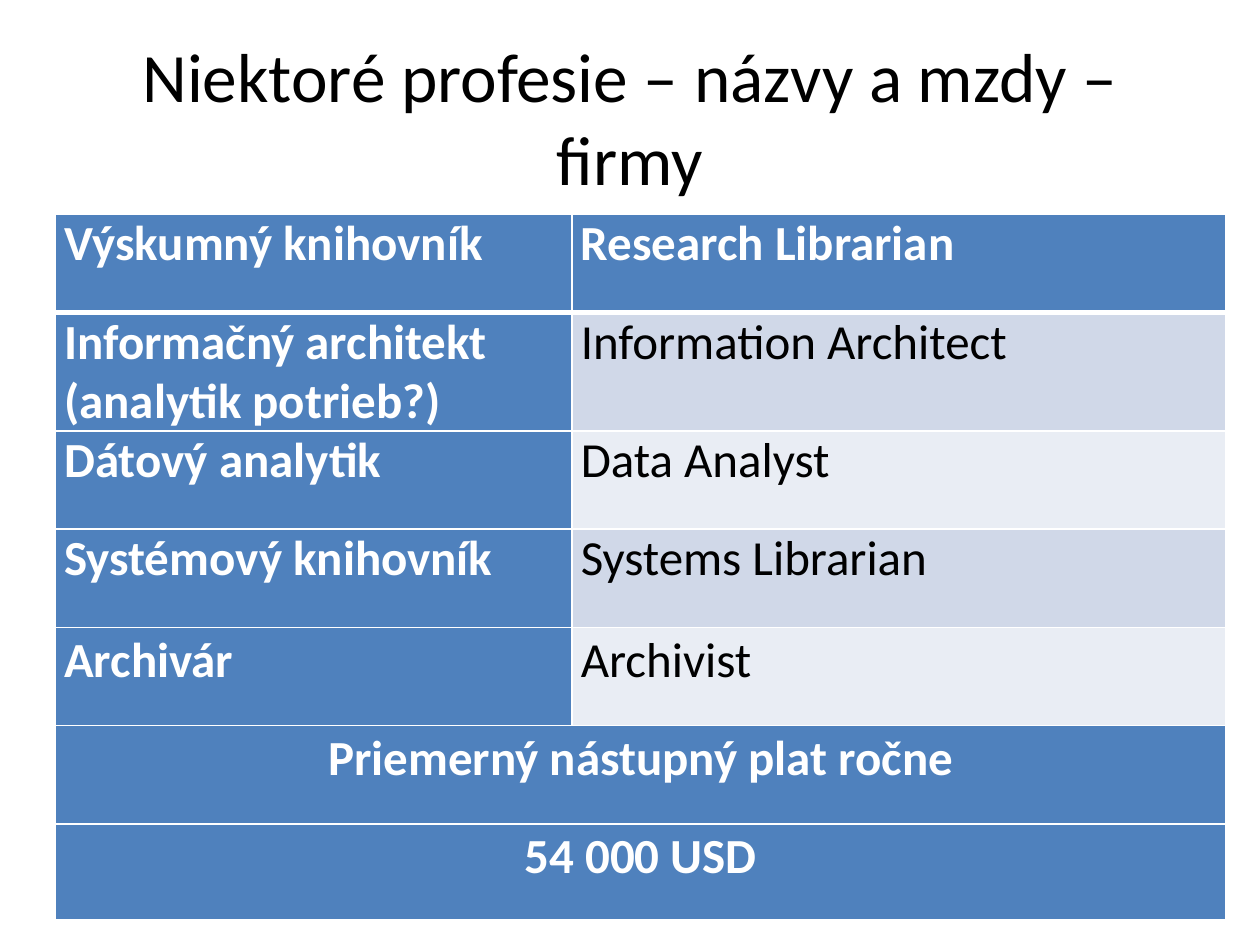
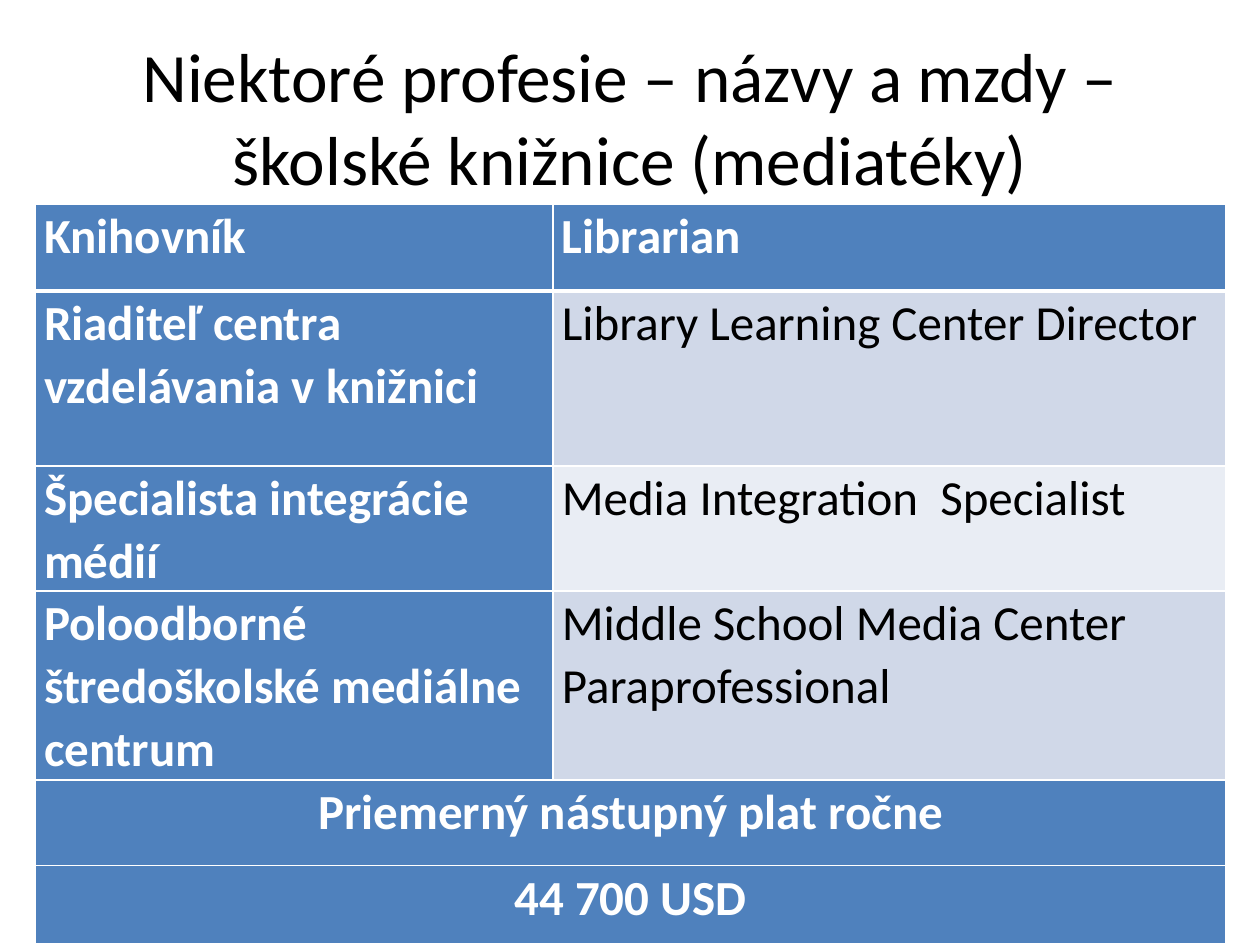
from lxml.etree import SubElement
from pptx import Presentation
from pptx.dml.color import RGBColor
from pptx.enum.text import MSO_ANCHOR, PP_ALIGN
from pptx.oxml.ns import qn
from pptx.util import Inches, Pt

BLUE = RGBColor(0x4F, 0x81, 0xBD)
BANDS = RGBColor(0xD0, 0xD8, 0xE8), RGBColor(0xE9, 0xED, 0xF4)
WHITE = RGBColor(0xFF, 0xFF, 0xFF)
BLACK = RGBColor(0x00, 0x00, 0x00)
FONT = "Calibri"
TITLE = "Niektoré profesie – názvy a mzdy – "
SALARY = "Priemerný nástupný plat ročne"


def write(frame, text, size=28, color=BLACK, bold=False, align=PP_ALIGN.LEFT, spacing=None):
    para = frame.paragraphs[0]
    para.alignment = align
    if spacing:
        para.line_spacing = spacing
    span = para.add_run()
    span.text = text
    span.font.name = FONT
    span.font.size = Pt(size)
    span.font.bold = bold
    span.font.color.rgb = color


class SalaryDeck:
    """Builds slides that pair profession names with a starting salary."""

    def __init__(self):
        self.deck = Presentation()
        self.deck.slide_width = Inches(10)
        self.deck.slide_height = Inches(7.5)
        self.page = None

    def add_page(self, title_ending):
        self.page = self.deck.slides.add_slide(self.deck.slide_layouts[6])
        box = self.page.shapes.add_textbox(Inches(0.5), Inches(0.3), Inches(9), Inches(1.25))
        frame = box.text_frame
        frame.word_wrap = True
        frame.vertical_anchor = MSO_ANCHOR.MIDDLE
        write(frame, TITLE + title_ending, size=39.6, align=PP_ALIGN.CENTER)

    def add_borders(self, cell, top, bottom):
        properties = cell._tc.get_or_add_tcPr()
        for tag, width in (("lnL", 1), ("lnR", 1), ("lnT", top), ("lnB", bottom)):
            line = SubElement(properties, qn(f"a:{tag}"), w=str(Pt(width)))
            fill = SubElement(line, qn("a:solidFill"))
            SubElement(fill, qn("a:srgbClr"), val=str(WHITE))

    def add_cell(self, cell, text, fill, row, **style):
        cell.margin_left = cell.margin_right = Inches(0.07)
        cell.margin_top = cell.margin_bottom = 0
        self.add_borders(cell, 3 if row == 1 else 1, 3 if row == 0 else 1)
        cell.fill.solid()
        cell.fill.fore_color.rgb = fill
        if text:
            write(cell.text_frame, text, **style)

    def add_salary_table(self, professions, salary, left, top, columns, heights, loose_from):
        rows = professions + [(SALARY, None), (salary, None)]
        table = self.page.shapes.add_table(
            len(rows), 2, Inches(left), Inches(top),
            Inches(sum(columns)), Inches(sum(heights))).table
        table.first_row = table.horz_banding = False
        for column, width in zip(table.columns, columns):
            column.width = Inches(width)
        for index, (names, height) in enumerate(zip(rows, heights)):
            table.rows[index].height = Inches(height)
            merged = names[1] is None
            if merged:
                table.cell(index, 0).merge(table.cell(index, 1))
            for side, name in enumerate(names):
                strong = side == 0 or index == 0 or merged
                self.add_cell(
                    table.cell(index, side), name,
                    BLUE if strong else BANDS[(index - 1) % 2], index,
                    color=WHITE if strong else BLACK, bold=strong,
                    align=PP_ALIGN.CENTER if merged else PP_ALIGN.LEFT,
                    spacing=1.05 if index >= loose_from else None)


def main():
    show = SalaryDeck()

    show.add_page("firmy")
    show.add_salary_table(
        [("Výskumný knihovník", "Research Librarian"),
         ("Informačný architekt (analytik potrieb?)", "Information Architect"),
         ("Dátový analytik", "Data Analyst"),
         ("Systémový knihovník", "Systems Librarian"),
         ("Archivár", "Archivist")],
        "54 000 USD", 0.44, 1.7, (4.1, 5.19),
        [0.78, 0.94, 0.78, 0.78, 0.78, 0.78, 0.76], loose_from=4)

    show.add_page("školské knižnice (mediatéky)")
    show.add_salary_table(
        [("Knihovník", "Librarian"),
         ("Riaditeľ centra vzdelávania v knižnici", "Library Learning Center Director"),
         ("Špecialista integrácie médií", "Media Integration  Specialist"),
         ("Poloodborné štredoškolské mediálne centrum",
          "Middle School Media Center Paraprofessional")],
        "44 700 USD", 0.28, 1.62, (4.11, 5.34),
        [0.69, 1.39, 0.99, 1.5, 0.68, 0.62], loose_from=0)

    show.deck.save("out.pptx")


if __name__ == "__main__":
    main()
